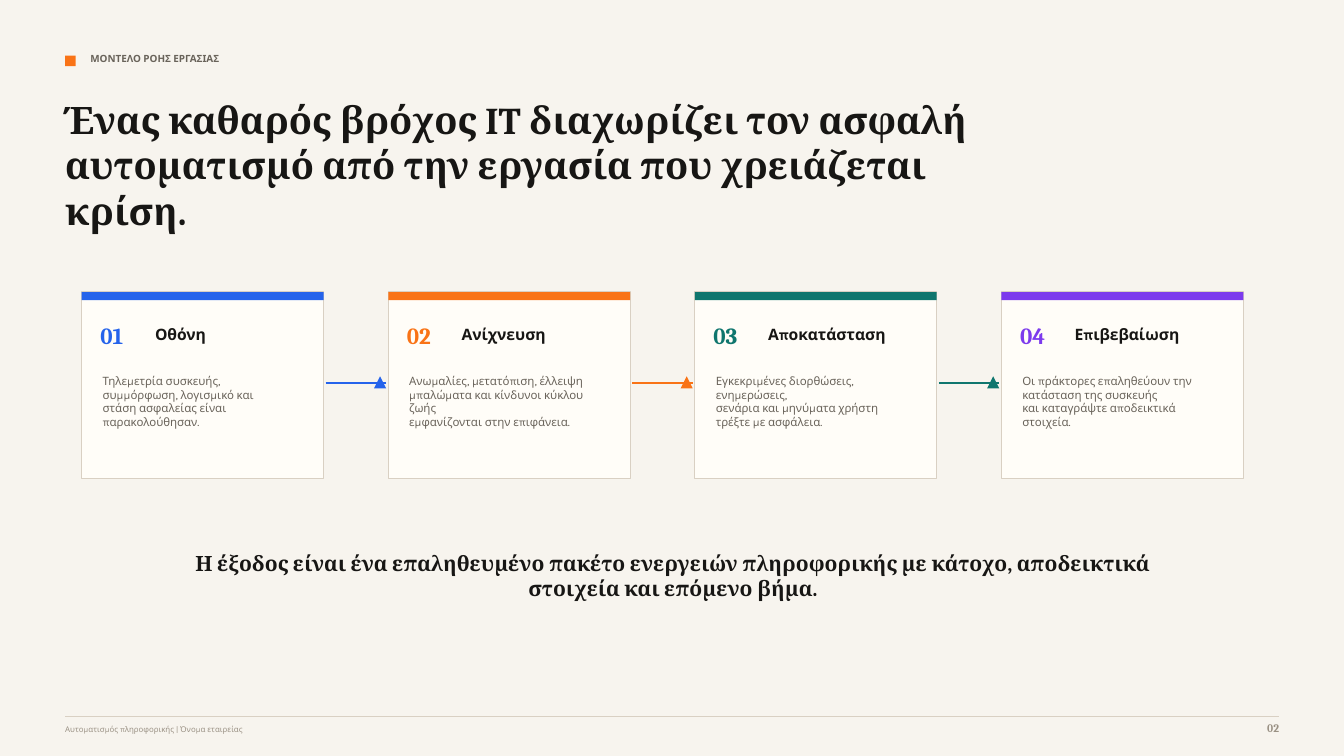
from dataclasses import dataclass

from lxml.etree import SubElement
from pptx import Presentation
from pptx.dml.color import RGBColor
from pptx.enum.shapes import MSO_CONNECTOR, MSO_SHAPE
from pptx.enum.text import MSO_ANCHOR, MSO_AUTO_SIZE, PP_ALIGN
from pptx.oxml.ns import qn
from pptx.shapes.autoshape import Shape
from pptx.slide import Slide
from pptx.util import Inches, Pt

PAPER = RGBColor(0xF7, 0xF4, 0xEE)
CARD = RGBColor(0xFF, 0xFD, 0xF8)
RULE = RGBColor(0xD9, 0xD0, 0xC3)
INK = RGBColor(0x17, 0x16, 0x14)
MUTED = RGBColor(0x69, 0x63, 0x5A)
FAINT = RGBColor(0x9A, 0x91, 0x84)
BLUE = RGBColor(0x25, 0x63, 0xEB)
ORANGE = RGBColor(0xF9, 0x73, 0x16)
GREEN = RGBColor(0x0F, 0x76, 0x6E)
VIOLET = RGBColor(0x7C, 0x3A, 0xED)

SERIF, SANS = "Cambria", "Karla"
SLIDE_WIDTH, SLIDE_HEIGHT = Inches(13.33), Inches(7.5)

# Positions and sizes are percentages of the slide's width and height.
MARGIN = 4.85
RIGHT_EDGE = 95.17
CARD_LEFT, CARD_TOP = 6.08, 38.63
CARD_WIDTH, CARD_HEIGHT = 18, 24.67
CARD_PITCH = 22.81
ARROW_LEVEL = 50.67


@dataclass(frozen=True)
class Box:
    left: float
    top: float
    width: float
    height: float

    def emu(self) -> tuple[int, int, int, int]:
        return (across(self.left), down(self.top),
                across(self.width), down(self.height))


@dataclass(frozen=True)
class Style:
    face: str
    size: float
    color: RGBColor
    bold: bool = False
    align: PP_ALIGN = PP_ALIGN.LEFT


@dataclass(frozen=True)
class Stage:
    name: str
    color: RGBColor
    details: tuple[str, ...]


STAGES = (
    Stage("Οθόνη", BLUE, (
        "Τηλεμετρία συσκευής,",
        "συμμόρφωση, λογισμικό και",
        "στάση ασφαλείας είναι",
        "παρακολούθησαν.")),
    Stage("Ανίχνευση", ORANGE, (
        "Ανωμαλίες, μετατόπιση, έλλειψη",
        "μπαλώματα και κίνδυνοι κύκλου ζωής",
        "εμφανίζονται στην επιφάνεια.")),
    Stage("Αποκατάσταση", GREEN, (
        "Εγκεκριμένες διορθώσεις, ενημερώσεις,",
        "σενάρια και μηνύματα χρήστη",
        "τρέξτε με ασφάλεια.")),
    Stage("Επιβεβαίωση", VIOLET, (
        "Οι πράκτορες επαληθεύουν την κατάσταση της συσκευής",
        "και καταγράψτε αποδεικτικά στοιχεία.")),
)


def across(share: float) -> int:
    return round(SLIDE_WIDTH * share / 100)


def down(share: float) -> int:
    return round(SLIDE_HEIGHT * share / 100)


def write(holder: Shape, style: Style, *lines: str) -> None:
    """Fill a text holder, one paragraph per line, without insets."""
    frame = holder.text_frame
    frame.word_wrap = True
    frame.auto_size = MSO_AUTO_SIZE.NONE
    frame.vertical_anchor = MSO_ANCHOR.TOP
    frame.margin_left = frame.margin_right = 0
    frame.margin_top = frame.margin_bottom = 0
    frame.text = "\n".join(lines)
    for paragraph in frame.paragraphs:
        paragraph.alignment = style.align
        font = paragraph.font
        font.name, font.size, font.bold = style.face, Pt(style.size), style.bold
        font.color.rgb = style.color


def add_text(slide: Slide, box: Box, style: Style, *lines: str) -> None:
    write(slide.shapes.add_textbox(*box.emu()), style, *lines)


def add_block(slide: Slide, box: Box, fill: RGBColor,
              outline: RGBColor | None = None,
              kind: MSO_SHAPE = MSO_SHAPE.RECTANGLE) -> None:
    block = slide.shapes.add_shape(kind, *box.emu())
    block.shadow.inherit = False
    block.fill.solid()
    block.fill.fore_color.rgb = fill
    if outline is None:
        block.line.fill.background()
    else:
        block.line.color.rgb = outline
        block.line.width = Pt(0.75)


def add_level_line(slide: Slide, start: float, end: float, level: float,
                   color: RGBColor, weight: float) -> None:
    line = slide.shapes.add_connector(
        MSO_CONNECTOR.STRAIGHT,
        across(start), down(level), across(end), down(level))
    line.line.color.rgb = color
    line.line.width = Pt(weight)
    SubElement(line._element.spPr, qn("a:effectLst"))


def add_stage(slide: Slide, position: int, stage: Stage) -> None:
    left = CARD_LEFT + position * CARD_PITCH
    add_block(slide, Box(left, CARD_TOP, CARD_WIDTH, CARD_HEIGHT), CARD, RULE)
    add_block(slide, Box(left, CARD_TOP, CARD_WIDTH, 1.07), stage.color)
    add_text(slide, Box(left + 1.39, 42.53, 3.45, 3.87),
             Style(SERIF, 16.5, stage.color, bold=True), f"{position + 1:02}")
    add_text(slide, Box(left + 5.46, 42.93, 10, 2.8),
             Style(SANS, 11.2, INK, bold=True), stage.name)
    add_text(slide, Box(left + 1.56, 49.47, 14.4, 9.47),
             Style(SANS, 8.2, MUTED), *stage.details)


def add_link(slide: Slide, position: int, color: RGBColor) -> None:
    """Lead from one card to the next with a line and an upright triangle."""
    left = CARD_LEFT + position * CARD_PITCH
    add_level_line(slide, left + 18.15, left + 22.65, ARROW_LEVEL, color, 1.75)
    add_block(slide, Box(left + 21.75, ARROW_LEVEL - 0.9, 0.9, 1.6), color,
              kind=MSO_SHAPE.ISOSCELES_TRIANGLE)


def main() -> None:
    deck = Presentation()
    deck.slide_width, deck.slide_height = SLIDE_WIDTH, SLIDE_HEIGHT
    slide = deck.slides.add_slide(deck.slide_layouts.get_by_name("Title Only"))
    slide.background.fill.solid()
    slide.background.fill.fore_color.rgb = PAPER

    add_block(slide, Box(MARGIN, 7.35, 0.78, 1.4), ORANGE)
    add_text(slide, Box(6.72, 6.93, 48.5, 2.53),
             Style(SANS, 7.1, MUTED, bold=True), "ΜΟΝΤΕΛΟ ΡΟΗΣ ΕΡΓΑΣΙΑΣ")

    title = slide.shapes.title
    title.left, title.top, title.width, title.height = Box(
        MARGIN, 12.8, 70.37, 14.4).emu()
    write(title, Style(SERIF, 27, INK, bold=True),
          "Ένας καθαρός βρόχος IT διαχωρίζει τον ασφαλή αυτοματισμό "
          "από την εργασία που χρειάζεται κρίση.")

    for position, stage in enumerate(STAGES):
        add_stage(slide, position, stage)
    for position, stage in enumerate(STAGES[:-1]):
        add_link(slide, position, stage.color)

    add_text(slide, Box(13.73, 72.8, 72.69, 5.87),
             Style(SERIF, 15, INK, bold=True, align=PP_ALIGN.CENTER),
             "Η έξοδος είναι ένα επαληθευμένο πακέτο ενεργειών πληροφορικής "
             "με κάτοχο, αποδεικτικά στοιχεία και επόμενο βήμα.")

    add_level_line(slide, MARGIN, RIGHT_EDGE, 94.73, RULE, 0.75)
    add_text(slide, Box(MARGIN, 95.87, 59.41, 2),
             Style(SANS, 5.6, FAINT),
             "Αυτοματισμός πληροφορικής | Όνομα εταιρείας")
    add_text(slide, Box(RIGHT_EDGE - 3.75, 95.33, 3.75, 2.53),
             Style(SERIF, 8.2, FAINT, bold=True, align=PP_ALIGN.RIGHT), "02")

    deck.save("out.pptx")


if __name__ == "__main__":
    main()
